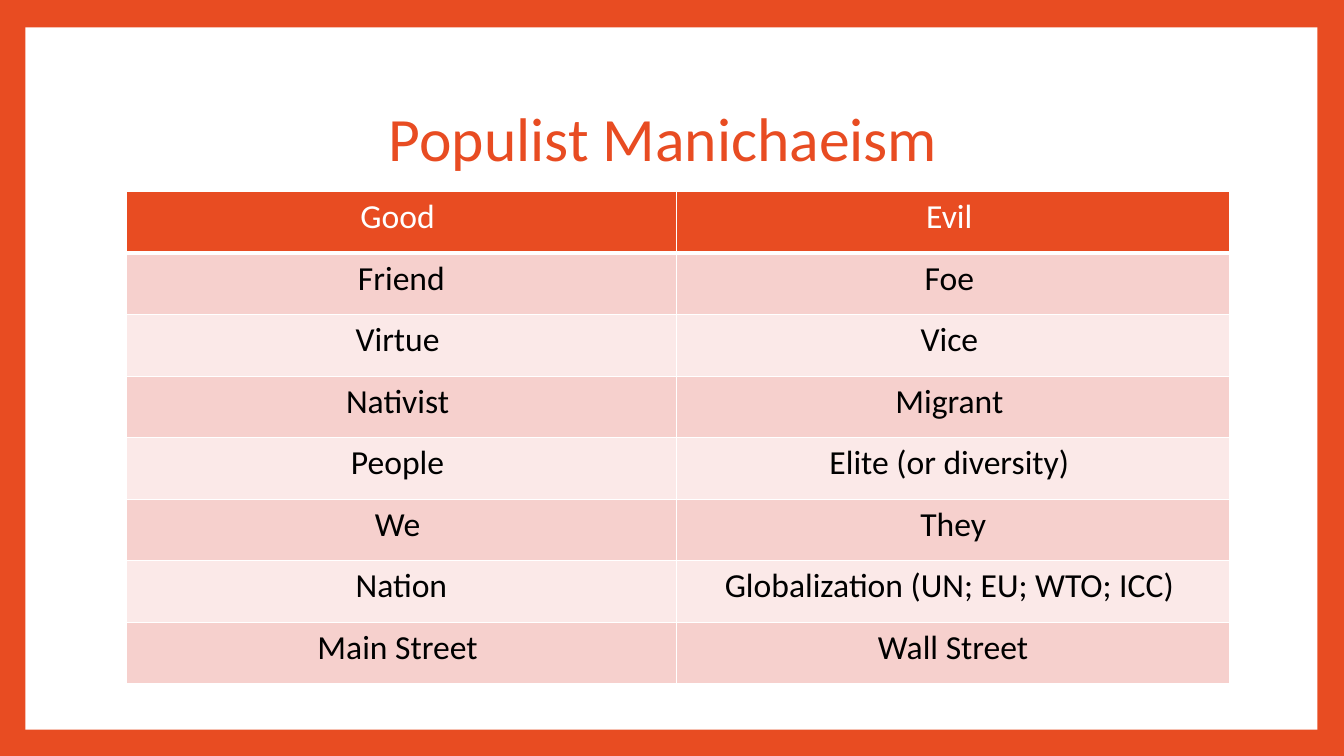
from lxml.etree import SubElement
from pptx import Presentation
from pptx.dml.color import RGBColor
from pptx.enum.shapes import MSO_SHAPE
from pptx.enum.text import MSO_ANCHOR, PP_ALIGN
from pptx.oxml.ns import qn
from pptx.util import Cm, Pt

ORANGE = RGBColor(0xE8, 0x4C, 0x22)
WHITE = RGBColor(0xFF, 0xFF, 0xFF)
BLACK = RGBColor(0, 0, 0)
ROSE = RGBColor(0xF6, 0xD0, 0xCD)
BLUSH = RGBColor(0xFB, 0xE9, 0xE8)

PAIRS = [
    ("Good ", "Evil "),
    ("Friend", "Foe "),
    ("Virtue ", "Vice "),
    ("Nativist ", "Migrant "),
    ("People ", "Elite (or diversity) "),
    ("We ", "They"),
    ("Nation", "Globalization (UN; EU; WTO; ICC) "),
    ("Main Street ", "Wall Street"),
]


def write(frame, text, size=24, color=BLACK, font="Calibri", space=None):
    para = frame.paragraphs[0]
    para.alignment = PP_ALIGN.CENTER
    para.line_spacing = space
    run = para.add_run()
    run.text = text
    run.font.name = font
    run.font.size = Pt(size)
    run.font.color.rgb = color


class Deck:
    def __init__(self, wide, high, back):
        self.show = Presentation()
        self.show.slide_width = Cm(wide)
        self.show.slide_height = Cm(high)
        self.slide = self.show.slides.add_slide(self.show.slide_layouts[6])
        fill = self.slide.background.fill
        fill.solid()
        fill.fore_color.rgb = back

    def panel(self, *box, color=WHITE):
        shape = self.slide.shapes.add_shape(MSO_SHAPE.RECTANGLE, *map(Cm, box))
        shape.shadow.inherit = False
        shape.fill.solid()
        shape.fill.fore_color.rgb = color
        shape.line.fill.background()

    def title(self, text, *box):
        frame = self.slide.shapes.add_textbox(*map(Cm, box)).text_frame
        frame.word_wrap = True
        frame.vertical_anchor = MSO_ANCHOR.MIDDLE
        write(frame, text, size=44, color=ORANGE, space=0.9)

    def edge(self, cell, side, width):
        line = SubElement(cell._tc.get_or_add_tcPr(), qn(f"a:ln{side}"), w=str(Pt(width)))
        SubElement(SubElement(line, qn("a:solidFill")), qn("a:srgbClr"), val=str(WHITE))

    def table(self, rows, left, top, widths, high):
        table = self.slide.shapes.add_table(
            len(rows), len(widths), Cm(left), Cm(top), Cm(sum(widths)), Cm(high * len(rows))
        ).table
        for col, width in zip(table.columns, widths):
            col.width = Cm(width)
        for i, row in enumerate(rows):
            table.rows[i].height = Cm(high)
            shade = ORANGE if i == 0 else (BLUSH, ROSE)[i % 2]
            for j, text in enumerate(row):
                cell = table.cell(i, j)
                for side in "LRTB":
                    self.edge(cell, side, 3 if (i, side) in ((0, "B"), (1, "T")) else 1)
                cell.fill.solid()
                cell.fill.fore_color.rgb = shade
                write(cell.text_frame, text, color=BLACK if i else WHITE)


def main():
    deck = Deck(33.87, 19.05, ORANGE)
    deck.panel(0.64, 0.69, 32.56, 17.7)
    deck.title("Populist Manichaeism ", 3.18, 1.7, 27.43, 3.76)
    deck.table(PAIRS, 3.18, 4.83, (13.87, 13.94), 1.55)
    deck.show.save("out.pptx")


if __name__ == "__main__":
    main()
